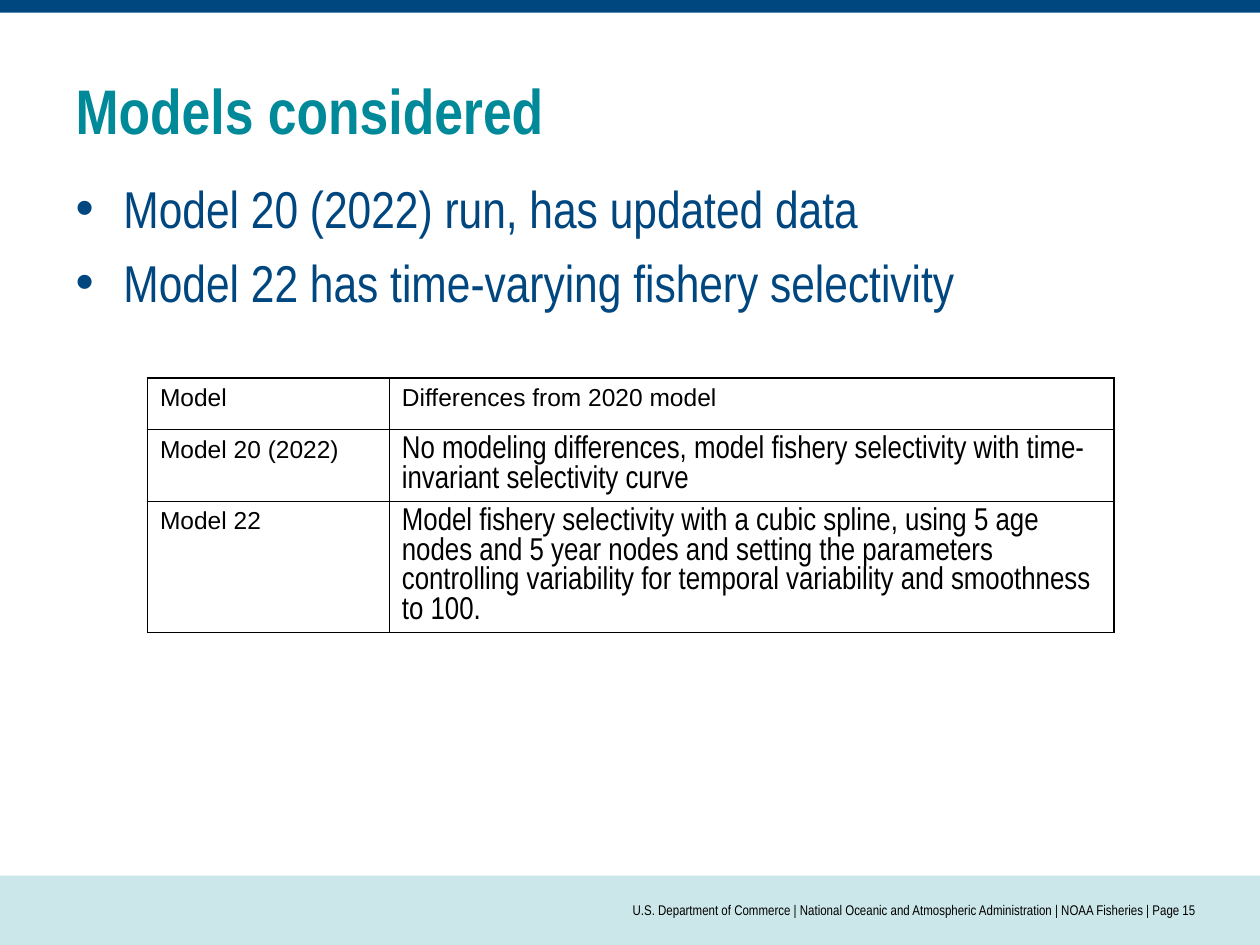
from dataclasses import dataclass

from lxml import etree
from pptx import Presentation
from pptx import util as u
from pptx.dml.color import RGBColor
from pptx.enum import shapes, text
from pptx.oxml import ns

NAVY = RGBColor(0x00, 0x46, 0x7F)
TEAL = RGBColor(0x00, 0x89, 0x98)
PALE = RGBColor(0xCC, 0xE7, 0xEA)
BLACK = RGBColor(0, 0, 0)
SANS = "Arial"
SLIM = "Arial Narrow"


@dataclass
class Bar:
    top: float
    high: float
    fill: RGBColor


@dataclass
class Row:
    high: float
    name: str
    note: str
    face: str = SLIM
    size: int = 18


BARS = [Bar(6.95, 0.55, PALE), Bar(0, 0.1, NAVY)]
ITEMS = [
    "Model 20 (2022) run, has updated data",
    "Model 22 has time-varying fishery selectivity",
]
ROWS = [
    Row(0.41, "Model", "Differences from 2020 model", SANS, 14),
    Row(0.57, "Model 20 (2022)",
        "No modeling differences, model fishery selectivity with "
        "time-invariant selectivity curve"),
    Row(1.04, "Model 22",
        "Model fishery selectivity with a cubic spline, using 5 age nodes "
        "and 5 year nodes and setting the parameters controlling variability "
        "for temporal variability and smoothness to 100."),
]
COLS = [1.92, 5.75]
FOOT = ["U.S. Department of Commerce",
        "National Oceanic and Atmospheric Administration",
        "NOAA Fisheries", "Page 15"]


def style(para, face: str, size: float, color: RGBColor, bold: bool = False) -> None:
    font = para.font
    font.name, font.size, font.bold = face, u.Pt(size), bold
    font.color.rgb = color


def place(shape, left: float, top: float, wide: float, high: float) -> None:
    shape.left, shape.top = u.Inches(left), u.Inches(top)
    shape.width, shape.height = u.Inches(wide), u.Inches(high)


def draw_bar(slide, bar: Bar) -> None:
    shape = slide.shapes.add_shape(
        shapes.MSO_SHAPE.RECTANGLE, 0, u.Inches(bar.top),
        u.Inches(10), u.Inches(bar.high))
    shape.shadow.inherit = False
    shape.fill.solid()
    shape.fill.fore_color.rgb = bar.fill
    shape.line.fill.background()


def draw_title(slide) -> None:
    title = slide.shapes.title
    place(title, 0.5, 0.5, 9, 0.74)
    frame = title.text_frame
    frame.text = "Models considered"
    frame.vertical_anchor = text.MSO_ANCHOR.MIDDLE
    para = frame.paragraphs[0]
    para.alignment = text.PP_ALIGN.LEFT
    style(para, SLIM, 36, TEAL, True)


def draw_list(slide) -> None:
    body = slide.placeholders[1]
    place(body, 0.5, 1.32, 9, 1.1)
    frame = body.text_frame
    frame.margin_top = u.Inches(0.08)
    frame.text = "\n".join(ITEMS)
    for i, para in enumerate(frame.paragraphs):
        props = para._p.get_or_add_pPr()
        props.set("marL", str(u.Inches(0.38)))
        props.set("indent", str(u.Inches(-0.38)))
        etree.SubElement(props, ns.qn("a:buChar")).set("char", "•")
        para.space_before = u.Pt(7 if i else 0)
        style(para, SLIM, 29.6, NAVY)


def draw_foot(slide) -> None:
    box = slide.shapes.add_textbox(
        u.Inches(2.5), u.Inches(6.95), u.Inches(7), u.Inches(0.55))
    frame = box.text_frame
    frame.word_wrap = True
    frame.margin_left = frame.margin_right = 0
    frame.vertical_anchor = text.MSO_ANCHOR.MIDDLE
    frame.text = " | ".join(FOOT)
    para = frame.paragraphs[0]
    para.alignment = text.PP_ALIGN.RIGHT
    style(para, SLIM, 8, BLACK)


def add_edge(cell, side: str, width: float) -> None:
    line = etree.SubElement(cell._tc.get_or_add_tcPr(), ns.qn(f"a:{side}"))
    line.set("w", str(u.Pt(width)))
    fill = etree.SubElement(line, ns.qn("a:solidFill"))
    etree.SubElement(fill, ns.qn("a:srgbClr")).set("val", str(BLACK))


def draw_cell(cell, words: str, face: str, size: int, first: bool) -> None:
    cell.text = words
    para = cell.text_frame.paragraphs[0]
    if face == SLIM:
        para.line_spacing = u.Pt(16.9)
    style(para, face, size, BLACK)
    add_edge(cell, "lnL", 1 if first else 0.5)
    add_edge(cell, "lnR", 0.5 if first else 1)
    add_edge(cell, "lnT", 1)
    add_edge(cell, "lnB", 1)
    cell.fill.background()


def draw_table(slide) -> None:
    table = slide.shapes.add_table(
        len(ROWS), len(COLS), u.Inches(1.17), u.Inches(3),
        u.Inches(sum(COLS)), u.Inches(sum(r.high for r in ROWS))).table
    table.first_row = table.horz_banding = False
    for col, wide in zip(table.columns, COLS):
        col.width = u.Inches(wide)
    for i, row in enumerate(ROWS):
        table.rows[i].height = u.Inches(row.high)
        draw_cell(table.cell(i, 0), row.name, SANS, 14, True)
        draw_cell(table.cell(i, 1), row.note, row.face, row.size, False)


def main() -> None:
    deck = Presentation()
    deck.slide_width, deck.slide_height = u.Inches(10), u.Inches(7.5)
    slide = deck.slides.add_slide(deck.slide_layouts[1])
    for bar in BARS:
        draw_bar(slide, bar)
    draw_title(slide)
    draw_list(slide)
    draw_foot(slide)
    draw_table(slide)
    deck.save("out.pptx")


if __name__ == "__main__":
    main()
